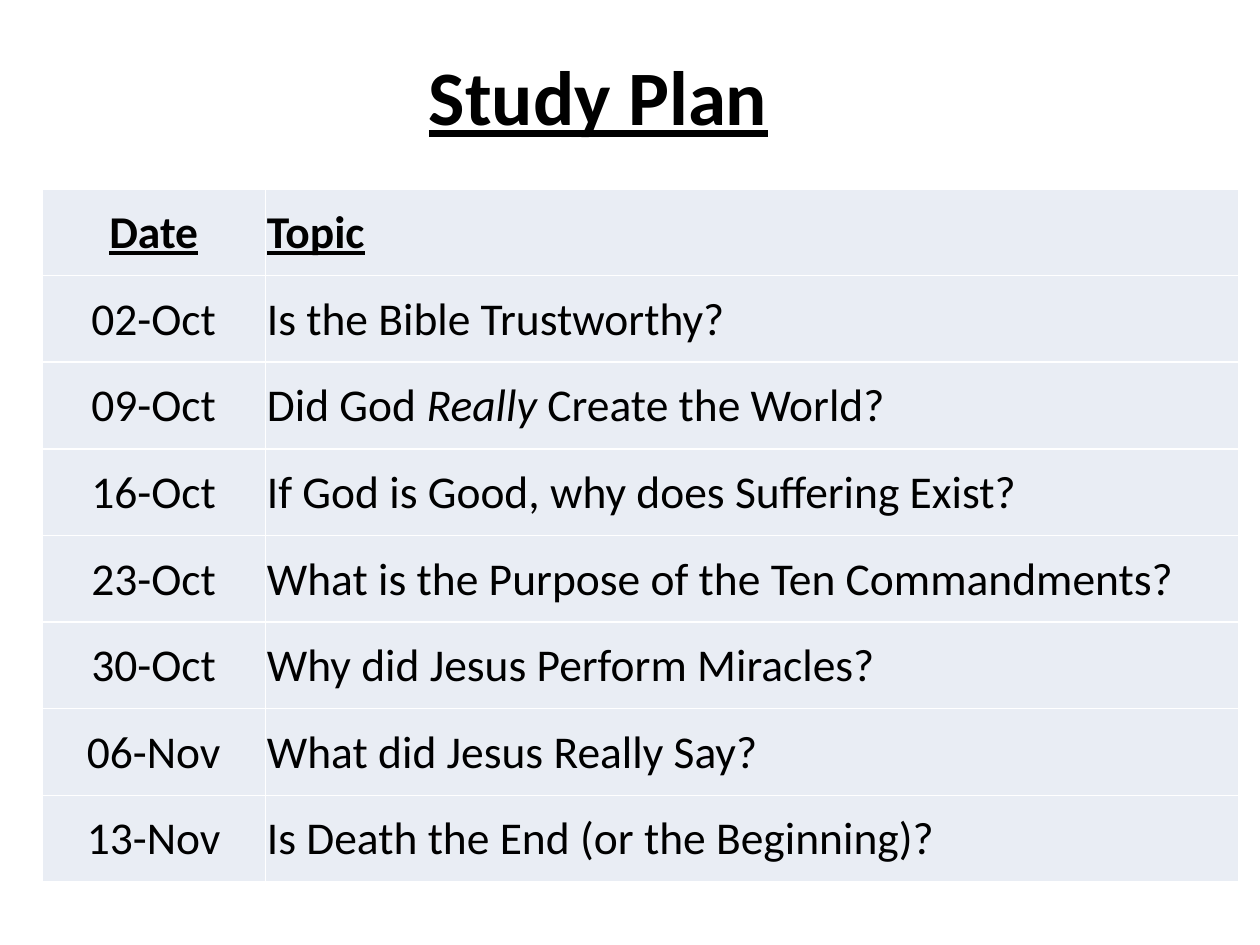
from lxml import etree
from pptx import Presentation
from pptx.dml.color import RGBColor
from pptx.enum.text import MSO_ANCHOR, PP_ALIGN
from pptx.oxml.ns import qn
from pptx.util import Cm, Pt

BLACK = RGBColor(0x00, 0x00, 0x00)
WHITE = RGBColor(0xFF, 0xFF, 0xFF)
PALE_BLUE = RGBColor(0xE9, 0xED, 0xF4)
LEFT, CENTER = PP_ALIGN.LEFT, PP_ALIGN.CENTER
MIDDLE = MSO_ANCHOR.MIDDLE
FONT = "Calibri"
BLANK_LAYOUT = 6

# Each topic is a list of (text, italic) parts
STUDY_PLAN = [
    ("02-Oct", [("Is the Bible Trustworthy?", False)]),
    ("09-Oct", [("Did God ", False), ("Really ", True), ("Create the World?", False)]),
    ("16-Oct", [("If God is Good, why does Suffering Exist?", False)]),
    ("23-Oct", [("What is the Purpose of the Ten Commandments?", False)]),
    ("30-Oct", [("Why did Jesus Perform Miracles?", False)]),
    ("06-Nov", [("What did Jesus Really Say?", False)]),
    ("13-Nov", [("Is Death the End (or the Beginning)?", False)]),
]


def add_span(para, text, size=26, heading=False, italic=False):
    """Add a run; headings are bold and underlined."""
    span = para.add_run()
    span.text = text
    font = span.font
    font.name, font.size = FONT, Pt(size)
    font.bold = font.underline = heading
    font.italic = italic
    font.color.rgb = BLACK


def set_borders(cell, color, width):
    """Draw all four cell borders; they go before the fill in the cell properties."""
    properties = cell._tc.get_or_add_tcPr()
    for position, side in enumerate(("lnL", "lnR", "lnT", "lnB")):
        line = etree.Element(qn(f"a:{side}"), w=str(Pt(width)))
        fill = etree.SubElement(line, qn("a:solidFill"))
        etree.SubElement(fill, qn("a:srgbClr"), val=str(color))
        properties.insert(position, line)


class PlanDeck:
    def __init__(self):
        self.deck = Presentation()
        self.deck.slide_width, self.deck.slide_height = Cm(25.4), Cm(19.05)
        self.page = self.deck.slides.add_slide(self.deck.slide_layouts[BLANK_LAYOUT])

    def title(self, text, left, top, width, height):
        box = self.page.shapes.add_textbox(Cm(left), Cm(top), Cm(width), Cm(height))
        frame = box.text_frame
        frame.word_wrap = True
        frame.vertical_anchor = MIDDLE
        para = frame.paragraphs[0]
        para.alignment = CENTER
        add_span(para, text, size=44, heading=True)

    def fill_cell(self, cell, parts, align, heading):
        cell.fill.solid()
        cell.fill.fore_color.rgb = PALE_BLUE
        cell.vertical_anchor = MIDDLE
        cell.margin_left = cell.margin_right = cell.margin_top = Cm(0.03)
        cell.margin_bottom = 0
        set_borders(cell, WHITE, 1)
        para = cell.text_frame.paragraphs[0]
        para.alignment = align
        for text, italic in parts:
            add_span(para, text, heading=heading, italic=italic)

    def table(self, rows, left, top, column_widths, height):
        table = self.page.shapes.add_table(
            len(rows), len(column_widths), Cm(left), Cm(top),
            Cm(sum(column_widths)), Cm(height)).table
        table.horz_banding = False
        for column, width in zip(table.columns, column_widths):
            column.width = Cm(width)
        for index, (date, topic) in enumerate(rows):
            table.rows[index].height = Cm(height / len(rows))
            heading = index == 0
            self.fill_cell(table.cell(index, 0), [(date, False)], CENTER, heading)
            self.fill_cell(table.cell(index, 1), topic, LEFT, heading)


def main():
    plan = PlanDeck()

    # Title
    plan.title("Study Plan", 6.35, 0.64, 11.43, 2.54)

    # Dates and topics
    header = ("Date", [("Topic", False)])
    plan.table([header] + STUDY_PLAN, 0.85, 3.81, (4.5, 19.63), 13.97)

    plan.deck.save("out.pptx")


if __name__ == "__main__":
    main()
